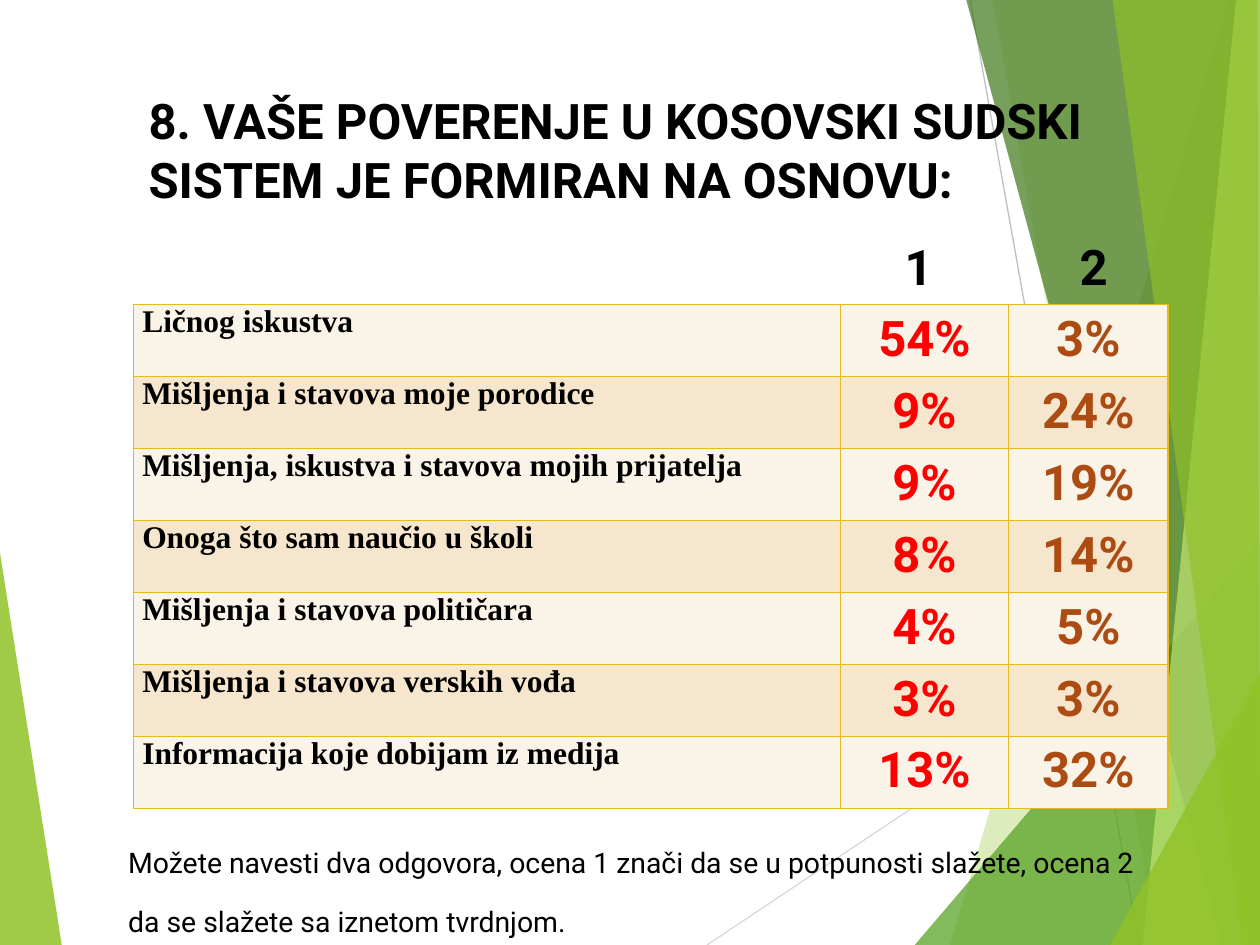
from lxml import etree
from pptx import Presentation
from pptx.dml.color import RGBColor
from pptx.enum.shapes import MSO_CONNECTOR
from pptx.enum.text import PP_ALIGN
from pptx.oxml.ns import qn
from pptx.util import Pt

LINE = MSO_CONNECTOR.STRAIGHT
LEFT, CENTER = PP_ALIGN.LEFT, PP_ALIGN.CENTER
SANS, SERIF = "Roboto", "Times New Roman"
BLACK, RED, BROWN, GOLD = "000000", "FF0000", "AD4C12", "E6B91E"
BANDS = ["FAF3E8", "F5E6CD"]
WIDE, HIGH = 720, 540

ROWS = [
    ("Ličnog iskustva", "54%", "3%"),
    ("Mišljenja i stavova moje porodice", "9%", "24%"),
    ("Mišljenja, iskustva i stavova mojih prijatelja", "9%", "19%"),
    ("Onoga što sam naučio u školi", "8%", "14%"),
    ("Mišljenja i stavova političara", "4%", "5%"),
    ("Mišljenja i stavova verskih vođa", "3%", "3%"),
    ("Informacija koje dobijam iz medija", "13%", "32%"),
]
COLS = [(404, SERIF, 18, BLACK, LEFT),
        (96, SANS, 28, RED, CENTER),
        (91.2, SANS, 28, BROWN, CENTER)]

RAYS = [((404, HIGH), (WIDE, 329), "D9D9D9"),
        ((554.4, 0), (651, HIGH), "BFBFBF")]
WEDGE = ([(0, 316), (35.3, HIGH), (0, HIGH)], "90C226", 85)
SHARDS = [
    ([(702, 0), (543, HIGH), (WIDE, HIGH), (WIDE, 0)], "90C226", 30),
    ([(567.4, 0), (661.7, HIGH), (WIDE, HIGH), (WIDE, 0)], "90C226", 20),
    ([(522.7, HIGH), (WIDE, 309), (WIDE, HIGH)], "54A021", 72),
    ([(552.2, 0), (698.4, HIGH), (WIDE, HIGH), (WIDE, 0)], "3F7819", 70),
    ([(706.3, 0), (653, HIGH), (WIDE, HIGH), (WIDE, 0)], "C0E474", 70),
    ([(635.8, 0), (710, HIGH), (WIDE, HIGH), (718.6, 0)], "90C226", 65),
    ([(634.3, HIGH), (WIDE, 385), (WIDE, HIGH)], "90C226", 80),
]


def paint(color, value):
    color.rgb = RGBColor.from_string(value)


def fill(item, value):
    item.fill.solid()
    paint(item.fill.fore_color, value)


def shard(slide, dots, color, alpha):
    dots = [(Pt(x), Pt(y)) for x, y in dots]
    pen = slide.shapes.build_freeform(*dots[0])
    pen.add_line_segments(dots[1:], close=True)
    shape = pen.convert_to_shape()
    shape.shadow.inherit = False
    shape.line.fill.background()
    fill(shape, color)
    tone = shape._element.spPr.find(".//" + qn("a:srgbClr"))
    etree.SubElement(tone, qn("a:alpha"), val=str(alpha * 1000))


def ray(slide, start, end, color):
    line = slide.shapes.add_connector(LINE, *map(Pt, start + end))
    paint(line.line.color, color)
    line.line.width = Pt(0.75)
    etree.SubElement(line._element.spPr, qn("a:effectLst"))


def style(frame, face, size, color, bold=True):
    for run in frame.paragraphs[0].runs:
        run.font.name = face
        run.font.size = Pt(size)
        run.font.bold = bold
        paint(run.font.color, color)


def label(slide, text, box, bold=True):
    frame = slide.shapes.add_textbox(*map(Pt, box)).text_frame
    frame.word_wrap = True
    frame.text = text
    style(frame, SANS, 28, BLACK, bold)
    return frame


def heads(slide):
    frame = label(slide, "1\t2", (498, 131.8, 156, 41))
    frame.margin_left = Pt(19)
    props = frame.paragraphs[0]._p.get_or_add_pPr()
    tabs = etree.SubElement(props, qn("a:tabLst"))
    etree.SubElement(tabs, qn("a:tab"), pos=str(Pt(100)), algn="l")


def note(slide, text, box):
    frame = label(slide, text, box, False)
    for run in frame.paragraphs[0].runs:
        run._r.get_or_add_rPr().set("baseline", "30000")


def border(cell):
    props = cell._tc.get_or_add_tcPr()
    for spot, side in enumerate(("lnL", "lnR", "lnT", "lnB")):
        edge = etree.Element(qn("a:" + side), w=str(Pt(1)))
        solid = etree.SubElement(edge, qn("a:solidFill"))
        etree.SubElement(solid, qn("a:srgbClr"), val=GOLD)
        props.insert(spot, edge)


def grid(slide):
    wide = sum(col[0] for col in COLS)
    frame = slide.shapes.add_table(
        len(ROWS), len(COLS), Pt(76.3), Pt(174), Pt(wide), Pt(288))
    table = frame.table
    for c, col in enumerate(COLS):
        table.columns[c].width = Pt(col[0])
    for r, row in enumerate(ROWS):
        table.rows[r].height = Pt(288 / len(ROWS))
        for c, (_, face, size, color, side) in enumerate(COLS):
            cell = table.cell(r, c)
            cell.text_frame.text = row[c]
            cell.text_frame.paragraphs[0].alignment = side
            style(cell.text_frame, face, size, color)
            fill(cell, BANDS[r % 2])
            border(cell)
            if c == 0:
                cell.margin_left = cell.margin_right = Pt(5)
                cell.margin_top = cell.margin_bottom = 0


def main():
    deck = Presentation()
    deck.slide_width, deck.slide_height = Pt(WIDE), Pt(HIGH)
    slide = deck.slides.add_slide(deck.slide_layouts[6])
    shard(slide, *WEDGE)
    for item in RAYS:
        ray(slide, *item)
    for item in SHARDS:
        shard(slide, *item)
    label(slide, "8. VAŠE POVERENJE U KOSOVSKI SUDSKI SISTEM "
          "JE FORMIRAN NA OSNOVU:", (77.8, 48.2, 612, 75))
    grid(slide)
    heads(slide)
    note(slide, "Možete navesti dva odgovora, ocena 1 znači da se u potpunosti "
         "slažete, ocena 2 da se slažete sa iznetom tvrdnjom.",
         (66.2, 476, 606, 64))
    deck.save("out.pptx")


if __name__ == "__main__":
    main()
